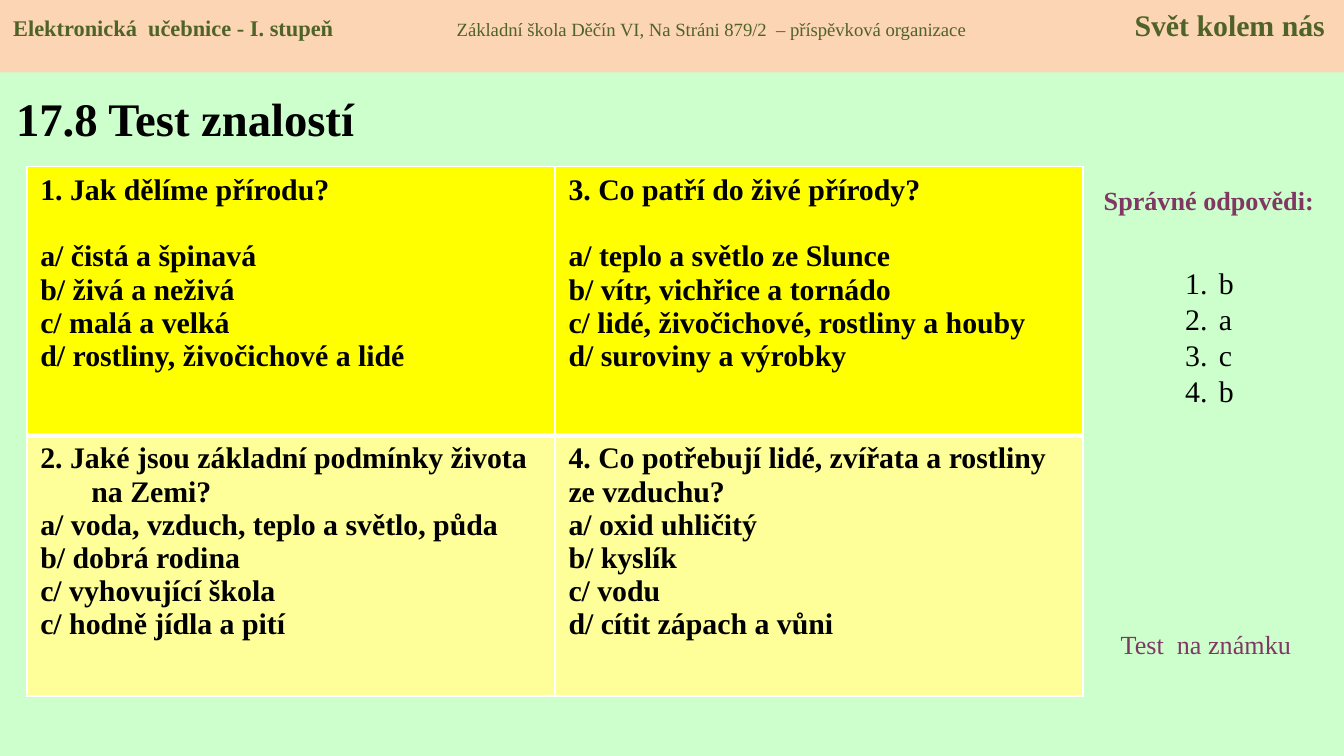
from dataclasses import dataclass

from lxml import etree
from pptx import Presentation
from pptx.dml.color import RGBColor
from pptx.enum.shapes import MSO_SHAPE
from pptx.enum.text import MSO_ANCHOR, PP_ALIGN
from pptx.oxml.ns import qn
from pptx.util import Inches, Pt

RECTANGLE = MSO_SHAPE.RECTANGLE
TOP, MIDDLE = MSO_ANCHOR.TOP, MSO_ANCHOR.MIDDLE
LEFT, CENTER = PP_ALIGN.LEFT, PP_ALIGN.CENTER


@dataclass(frozen=True)
class Theme:
    font: str = "Times New Roman"
    background: str = "CCFFCC"
    band: str = "FCD5B5"
    band_text: str = "4F6228"
    ink: str = "000000"
    accent: str = "813763"
    border: str = "FFFFFF"
    row_fills: tuple = ("FFFF00", "FFFF99")
    title: float = 25
    body: float = 16
    label: float = 14
    course: float = 12
    school: float = 10


THEME = Theme()
TITLE_ONLY = 5
HANGING = 0.38
QUESTIONS = [
    [
        ("1. Jak dělíme přírodu?", "a/ čistá a špinavá", "b/ živá a neživá",
         "c/ malá a velká", "d/ rostliny, živočichové a lidé"),
        ("3. Co patří do živé přírody?", "a/ teplo a světlo ze Slunce",
         "b/ vítr, vichřice a tornádo", "c/ lidé, živočichové, rostliny a houby",
         "d/ suroviny a výrobky"),
    ],
    [
        ("2. Jaké jsou základní podmínky života na Zemi?",
         "a/ voda, vzduch, teplo a světlo, půda", "b/ dobrá rodina",
         "c/ vyhovující škola", "c/ hodně jídla a pití"),
        ("4. Co potřebují lidé, zvířata a rostliny ze vzduchu?", "a/ oxid uhličitý",
         "b/ kyslík", "c/ vodu", "d/ cítit zápach a vůni"),
    ],
]


class SlideBuilder:
    def __init__(self, deck, theme):
        self.theme = theme
        self.slide = deck.slides.add_slide(deck.slide_layouts[TITLE_ONLY])
        self.fill(self.slide.background, theme.background)

    def fill(self, target, color):
        target.fill.solid()
        target.fill.fore_color.rgb = RGBColor.from_string(color)

    def span(self, para, text, size, color, bold=False):
        span = para.add_run()
        span.text = text
        span.font.name = self.theme.font
        span.font.size = Pt(size)
        span.font.bold = bold
        span.font.color.rgb = RGBColor.from_string(color)

    def paragraphs(self, frame, count):
        return [frame.paragraphs[0]] + [frame.add_paragraph() for _ in range(count - 1)]

    def hang(self, para, indent):
        properties = para._p.get_or_add_pPr()
        properties.set("marL", str(Inches(indent)))
        properties.set("indent", str(-Inches(indent)))
        return properties

    def title(self, text, *area):
        title = self.slide.shapes.title
        title.left, title.top, title.width, title.height = map(Inches, area)
        title.text_frame.vertical_anchor = MIDDLE
        para = title.text_frame.paragraphs[0]
        para.alignment = LEFT
        self.span(para, text, self.theme.title, self.theme.ink, True)

    def band(self, parts, stops, *area):
        band = self.slide.shapes.add_shape(RECTANGLE, *map(Inches, area))
        band.shadow.inherit = False
        self.fill(band, self.theme.band)
        band.line.fill.background()
        band.text_frame.vertical_anchor = TOP
        para = band.text_frame.paragraphs[0]
        para.alignment = LEFT
        tabs = etree.SubElement(para._p.get_or_add_pPr(), qn("a:tabLst"))
        for position, alignment in stops:
            etree.SubElement(tabs, qn("a:tab"), pos=str(Inches(position)), algn=alignment)
        for text, size, bold in parts:
            self.span(para, text, size, self.theme.band_text, bold)

    def text_box(self, *area):
        box = self.slide.shapes.add_textbox(*map(Inches, area))
        box.text_frame.word_wrap = True
        return box.text_frame

    def label(self, text, bold, alignment, *area):
        para = self.text_box(*area).paragraphs[0]
        para.alignment = alignment
        self.span(para, text, self.theme.label, self.theme.accent, bold)

    def numbered_list(self, items, *area):
        frame = self.text_box(*area)
        frame.margin_top = Inches(0.32)
        for para, item in zip(self.paragraphs(frame, len(items)), items):
            properties = self.hang(para, 0.25)
            etree.SubElement(properties, qn("a:buFont"), typeface=self.theme.font)
            etree.SubElement(properties, qn("a:buAutoNum"), type="arabicPeriod")
            self.span(para, item, self.theme.body, self.theme.ink)

    def border(self, side, width):
        line = etree.Element(qn(f"a:ln{side}"), w=str(Pt(width)))
        solid = etree.SubElement(line, qn("a:solidFill"))
        etree.SubElement(solid, qn("a:srgbClr"), val=self.theme.border)
        return line

    def question_cell(self, cell, lines, row, column):
        self.fill(cell, self.theme.row_fills[row])
        top, bottom = (1, 3) if row == 0 else (3, 1)
        properties = cell._tc.get_or_add_tcPr()
        for position, (side, width) in enumerate(zip("LRTB", (1, 1, top, bottom))):
            properties.insert(position, self.border(side, width))
        for index, para in enumerate(self.paragraphs(cell.text_frame, len(lines))):
            if (row, column) != (1, 1):
                self.hang(para, HANGING)
            if row == 0 and index == 1:
                para.space_before = Pt(18)
            self.span(para, lines[index], self.theme.body, self.theme.ink, True)

    def question_table(self, questions, heights, *area):
        shape = self.slide.shapes.add_table(len(questions), len(questions[0]), *map(Inches, area))
        table = shape.table
        table.first_row = table.horz_banding = False
        for row, cells in enumerate(questions):
            table.rows[row].height = Inches(heights[row])
            for column, lines in enumerate(cells):
                self.question_cell(table.cell(row, column), lines, row, column)


def main():
    deck = Presentation()
    deck.slide_width = Inches(10)
    deck.slide_height = deck.slide_width * 9 // 16
    page = SlideBuilder(deck, THEME)
    page.title("17.8 Test znalostí", 0.02, 0.55, 3.19, 0.65)
    page.label("Správné odpovědi:", True, CENTER, 8.05, 1.32, 1.89, 0.34)
    page.question_table(QUESTIONS, (2, 1.94), 0.2, 1.24, 7.86, 3.94)
    page.numbered_list("bacb", 8.72, 1.65, 0.55, 1.99)
    page.label("Test  na známku", False, LEFT, 8.24, 4.63, 1.57, 0.34)
    page.band(
        [
            ("Elektronická  učebnice - I. stupeň", THEME.course, True),
            ("\tZákladní škola Děčín VI, Na Stráni 879/2  – příspěvková organizace\t",
             THEME.school, False),
            ("Svět kolem nás", THEME.body, True),
        ],
        [(3.3, "l"), (9.76, "r")],
        0, 0, 10, 0.54,
    )
    deck.save("out.pptx")


if __name__ == "__main__":
    main()
